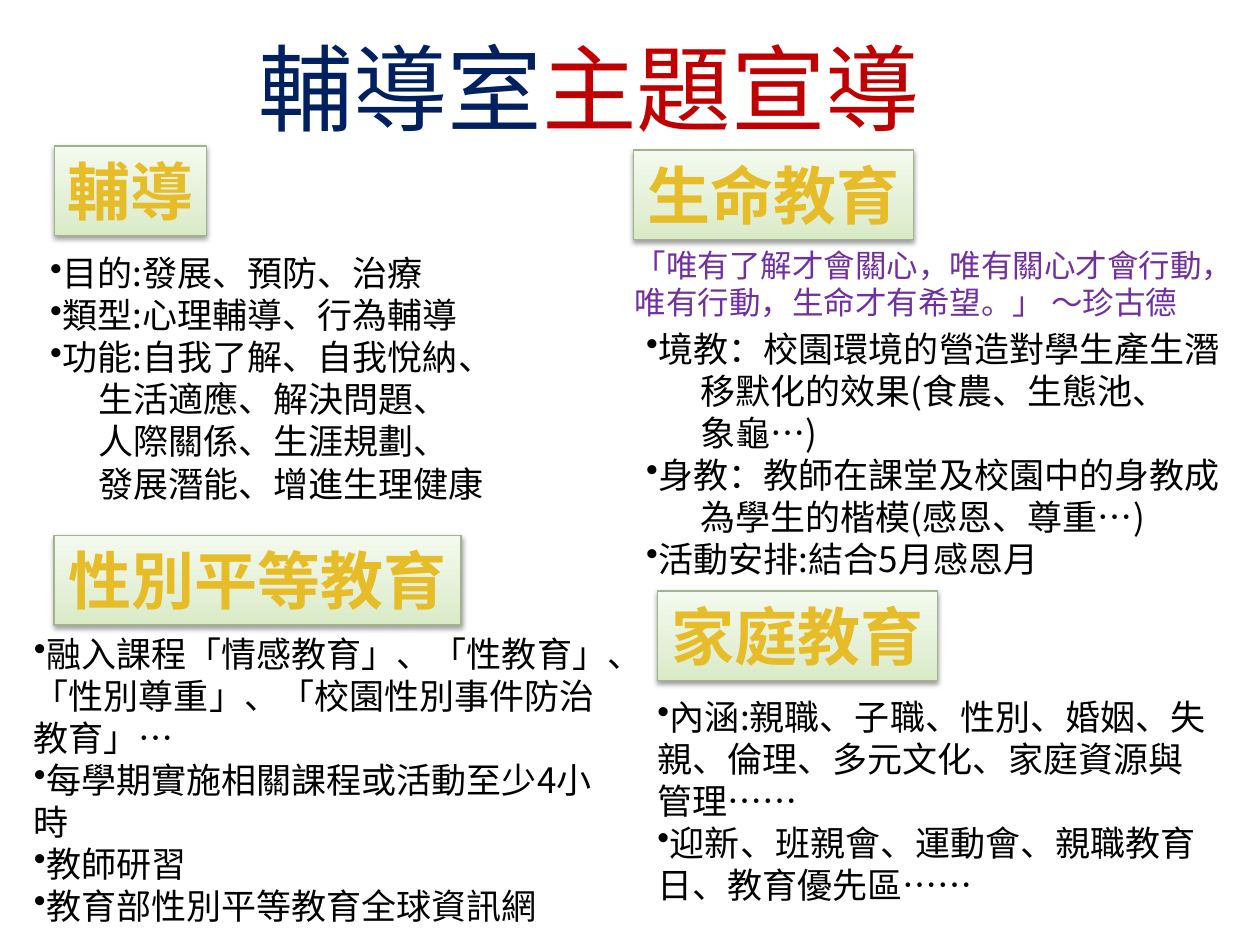
import pptx
import pptx.util
import pptx.dml.color
import pptx.enum.shapes
import pptx.enum.text
import pptx.oxml
import pptx.oxml.ns

FONT = "Noto Sans CJK SC"
LINE_RATIO = 1.2
NAMESPACE = pptx.oxml.ns.nsdecls("a")
GRADIENT = [(0, "D9EAC6"), (35, "E3F0D6"), (100, "F4FAEF")]

# Content: a text starting with "•" is a bullet, other lines continue it
TITLE = [("輔導室", "002060"), ("主題宣導", "C00000")]
QUOTE = "「唯有了解才會關心，唯有關心才會行動，唯有行動，生命才有希望。」 ～珍古德"

# Each topic: heading, heading place, body place, continuation indent, lines
TOPICS = [
    ("輔導", (0.43, 1.16, 1.21, 0.71), (0.3, 1.95, 4.88, 2.12), 0.38, [
        "•目的:發展、預防、治療",
        "•類型:心理輔導、行為輔導",
        "•功能:自我了解、自我悅納、",
        "生活適應、解決問題、",
        "人際關係、生涯規劃、",
        "發展潛能、增進生理健康",
    ]),
    ("生命教育", (5.03, 1.19, 2.22, 0.71), (5.03, 2.55, 5, 2.12), 0.43, [
        "•境教：校園環境的營造對學生產生潛",
        "移默化的效果(食農、生態池、",
        "象龜…)",
        "•身教：教師在課堂及校園中的身教成",
        "為學生的楷模(感恩、尊重…)",
        "•活動安排:結合5月感恩月",
    ]),
    ("性別平等教育", (0.43, 4.25, 3.23, 0.71), (0.17, 4.97, 4.9, 2.12), 0, [
        "•融入課程「情感教育」、「性教育」、「性別尊重」、「校園性別事件防治教育」…",
        "•每學期實施相關課程或活動至少4小時",
        "•教師研習",
        "•教育部性別平等教育全球資訊網",
    ]),
    ("家庭教育", (5.22, 4.69, 2.22, 0.71), (5.12, 5.47, 4.64, 2.42), 0, [
        "•內涵:親職、子職、性別、婚姻、失親、倫理、多元文化、家庭資源與管理……",
        "•迎新、班親會、運動會、親職教育日、教育優先區……",
    ]),
]


def color(value):
    return pptx.dml.color.RGBColor.from_string(value)


def inches(place):
    return [pptx.util.Inches(length) for length in place]


def xml(markup):
    return pptx.oxml.parse_xml(markup)


def add_span(para, text, size=20, fill="000000", bold=False):
    span = para.add_run()
    span.text = text
    span.font.size = pptx.util.Pt(size)
    span.font.name = FONT
    span.font.bold = bold
    span.font.color.rgb = color(fill)
    latin = span.font._element.find(pptx.oxml.ns.qn("a:latin"))
    latin.addnext(xml(f'<a:ea {NAMESPACE} typeface="{FONT}"/>'))


def write_line(para, spans, size=20, bold=False, centered=False, bullet=False, indent=0):
    props = para._p.get_or_add_pPr()
    props.set("marL", str(pptx.util.Inches(indent)))
    props.set("indent", "0")
    if bullet:
        props.append(xml(f'<a:buChar {NAMESPACE} char="•"/>'))
    para.line_spacing = pptx.util.Pt(size * LINE_RATIO)
    if centered:
        para.alignment = pptx.enum.text.PP_ALIGN.CENTER
    for text, fill in spans:
        add_span(para, text, size=size, fill=fill, bold=bold)


def add_text(page, place):
    frame = page.shapes.add_textbox(*inches(place)).text_frame
    frame.word_wrap = True
    return frame


def add_heading(page, text, place):
    box = page.shapes.add_shape(pptx.enum.shapes.MSO_SHAPE.RECTANGLE, *inches(place))
    box.line.color.rgb = color("A1B28E")
    box.line.width = pptx.util.Pt(0.75)
    box.shadow.inherit = False
    # Three-stop gradient rising from the bottom edge, and a soft shadow below
    stops = "".join(f'<a:gs pos="{share * 1000}"><a:srgbClr val="{value}"/></a:gs>'
                    for share, value in GRADIENT)
    outline = box._element.spPr.find(pptx.oxml.ns.qn("a:ln"))
    outline.addprevious(xml(f'<a:gradFill {NAMESPACE} rotWithShape="1"><a:gsLst>{stops}</a:gsLst>'
                            '<a:lin ang="16200000" scaled="0"/></a:gradFill>'))
    effects = box._element.spPr.find(pptx.oxml.ns.qn("a:effectLst"))
    effects.append(xml(f'<a:outerShdw {NAMESPACE} blurRad="{pptx.util.Pt(3.1)}" '
                       f'dist="{pptx.util.Pt(1.6)}" dir="5400000" rotWithShape="0">'
                       '<a:srgbClr val="000000"><a:alpha val="38000"/></a:srgbClr></a:outerShdw>'))
    frame = box.text_frame
    frame.word_wrap = False
    frame.vertical_anchor = pptx.enum.text.MSO_ANCHOR.TOP
    write_line(frame.paragraphs[0], [(text, "E7BC29")], size=36, bold=True, centered=True)


def add_body(page, lines, place, indent):
    frame = add_text(page, place)
    for index, line in enumerate(lines):
        para = frame.add_paragraph() if index else frame.paragraphs[0]
        bullet = line.startswith("•")
        write_line(para, [(line.removeprefix("•"), "000000")],
                   bullet=bullet, indent=0 if bullet else indent)


def main():
    deck = pptx.Presentation()
    deck.slide_width, deck.slide_height = inches((10, 7.5))
    page = deck.slides.add_slide(deck.slide_layouts[6])

    # Title
    title = add_text(page, (0.18, 0.18, 9, 1.01))
    title.vertical_anchor = pptx.enum.text.MSO_ANCHOR.MIDDLE
    write_line(title.paragraphs[0], TITLE, size=54, centered=True)

    # Topics
    for heading, heading_place, body_place, indent, lines in TOPICS:
        add_heading(page, heading, heading_place)
        add_body(page, lines, body_place, indent)

    # Quote
    quote = add_text(page, (4.94, 1.9, 5, 0.71))
    write_line(quote.paragraphs[0], [(QUOTE, "7030A0")], size=18)

    deck.save("out.pptx")


if __name__ == "__main__":
    main()
